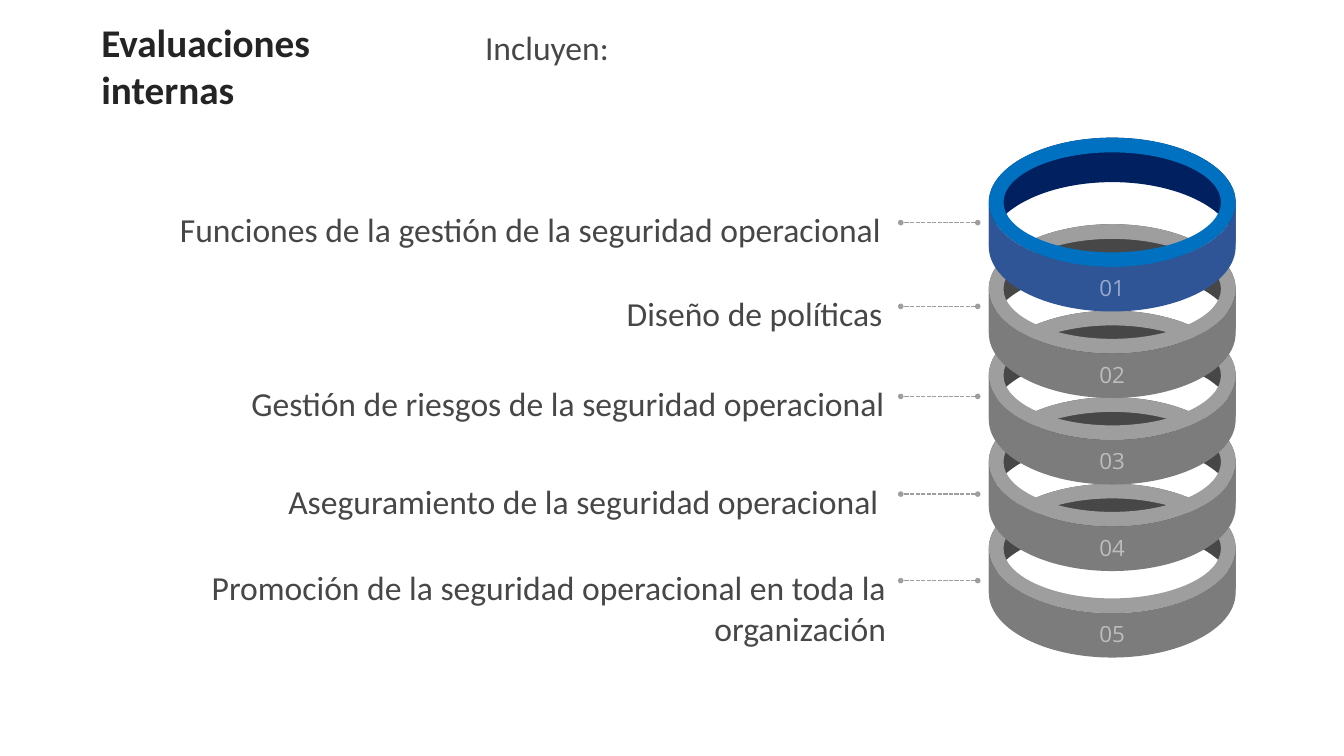
from lxml import etree
from pptx import Presentation
from pptx.dml import color
from pptx.enum import dml, shapes, text
from pptx.oxml import ns
from pptx.util import Cm, Pt

RGBColor = color.RGBColor
INK = RGBColor(0x24, 0x24, 0x24)
GREY = RGBColor(0x47, 0x47, 0x47)
MID = RGBColor(0x7C, 0x7C, 0x7C)
PALE = RGBColor(0x9E, 0x9E, 0x9E)
NAVY = RGBColor(0x00, 0x20, 0x60)
BLUE = RGBColor(0x00, 0x70, 0xC0)
STEEL = RGBColor(0x2F, 0x55, 0x97)
WHITE = RGBColor(0xFF, 0xFF, 0xFF)

# Ring geometry in cm: centre, radii, band, wall depth, distance between rings
MID_X, TOP_Y = 28.03, 5.1
RAD_X, RAD_Y = 3.11, 1.63
BAND, DEPTH, PITCH = 0.37, 1.12, 2.18

# Half a unit circle from right to left as two Bezier curves
BEND = 0.55
HALF = [(1, 0), (1, BEND), (BEND, 1), (0, 1), (-BEND, 1), (-1, BEND), (-1, 0)]

# Label text, top and right edge in cm
ROWS = [
    ("Funciones de la gestión de la seguridad operacional", 5.15, 22.45),
    ("Diseño de políticas", 7.26, 22.49),
    ("Gestión de riesgos de la seguridad operacional", 9.53, 22.54),
    ("Aseguramiento de la seguridad operacional ", 11.99, 22.58),
    ("Promoción de la seguridad operacional en toda la organización", 14.17, 22.58),
]
LEFT = 2.31


def place(shape, x, y, w, h):
    shape.left, shape.top, shape.width, shape.height = Cm(x), Cm(y), Cm(w), Cm(h)


def write(shape, words, size, ink, align, face="Calibri", bold=False):
    frame = shape.text_frame
    frame.word_wrap = True
    frame.auto_size = text.MSO_AUTO_SIZE.NONE
    frame.text = words
    para = frame.paragraphs[0]
    para.alignment = align
    para.space_before = Pt(0)
    font = para.runs[0].font
    font.name, font.size, font.bold = face, Pt(size), bold
    font.color.rgb = ink
    return frame


def arc(y, side, trim=0):
    """Half an ellipse from right to left; side is -1 for up, 1 for down."""
    return [(Cm(MID_X + (RAD_X - trim) * h), Cm(y + side * (RAD_Y - trim) * v))
            for h, v in HALF]


def oval(y, trim=0):
    return arc(y, -1, trim) + arc(y, 1, trim)[-2::-1]


def side_wall(y, side):
    near, far = arc(y, side), arc(y + DEPTH, side)[::-1]
    return near + far[:1] * 3 + far[1:]


def curve(group, loops, fill):
    """Draw closed loops, each a start point and then three points a curve."""
    pen = group.shapes.build_freeform(*loops[0][0])
    for k, loop in enumerate(loops):
        if k:
            pen.move_to(*loop[0])
        pen.add_line_segments(loop[1:], close=True)
    shape = pen.convert_to_shape()
    shape.shadow.inherit = False
    shape.fill.solid()
    shape.fill.fore_color.rgb = fill
    shape.line.fill.background()
    # Join every three straight steps into one Bezier curve
    for track in shape._element.iter(ns.qn("a:path")):
        lines = track.findall(ns.qn("a:lnTo"))
        for k in range(0, len(lines), 3):
            bend = etree.Element(ns.qn("a:cubicBezTo"))
            lines[k].addprevious(bend)
            for line in lines[k:k + 3]:
                bend.append(line[0])
                track.remove(line)
    return shape


def ring(slide, num, back, rim, front):
    y = TOP_Y + (num - 1) * PITCH
    group = slide.shapes.add_group_shape()
    curve(group, [side_wall(y, -1)], back)
    curve(group, [oval(y, BAND), oval(y)], rim)
    face = curve(group, [side_wall(y, 1)], front)
    frame = write(face, f"{num:02}", 16, WHITE, text.PP_ALIGN.CENTER, "Open Sans")
    frame.vertical_anchor = text.MSO_ANCHOR.BOTTOM
    frame.margin_left = frame.margin_right = frame.margin_top = 0
    frame.margin_bottom = Cm(0.26)
    # Half-transparent number
    tint = frame.paragraphs[0].runs[0].font.fill._xPr.find(".//" + ns.qn("a:srgbClr"))
    etree.SubElement(tint, ns.qn("a:alpha"), val="50000")


def label(group, words, top, right):
    box = group.shapes.add_textbox(Cm(LEFT), Cm(top), Cm(right - LEFT), Cm(1.9))
    write(box, words, 24, GREY, text.PP_ALIGN.RIGHT)


def leader(group, y):
    link = group.shapes.add_connector(
        shapes.MSO_CONNECTOR.STRAIGHT, Cm(24.64), Cm(y), Cm(22.7), Cm(y))
    link.line.color.rgb = PALE
    link.line.width = Pt(1)
    link.line.dash_style = dml.MSO_LINE.SQUARE_DOT
    pen = link.line._get_or_add_ln()
    for end in ("a:headEnd", "a:tailEnd"):
        etree.SubElement(pen, ns.qn(end), type="oval", w="sm", len="sm")
    etree.SubElement(link._element.spPr, ns.qn("a:effectLst"))


def main():
    prs = Presentation()
    prs.slide_width, prs.slide_height = Cm(33.87), Cm(19.05)
    slide = prs.slides.add_slide(prs.slide_layouts[0])

    # Heading
    title = slide.shapes.title
    place(title, 2.3, 0.34, 7.24, 2.62)
    frame = write(title, "Evaluaciones internas", 28, INK, text.PP_ALIGN.LEFT, bold=True)
    frame.vertical_anchor = text.MSO_ANCHOR.BOTTOM
    intro = slide.placeholders[1]
    place(intro, 11.97, 0.56, 10.74, 1.27)
    write(intro, "Incluyen:", 24, GREY, text.PP_ALIGN.LEFT)

    # Stack of rings, lowest first
    for num in range(len(ROWS), 1, -1):
        ring(slide, num, GREY, PALE, MID)
    ring(slide, 1, NAVY, BLUE, STEEL)

    # Labels with leader lines
    for words, top, right in ROWS:
        group = slide.shapes.add_group_shape()
        label(group, words, top, right)
        leader(group, top + 0.46)

    prs.save("out.pptx")


if __name__ == "__main__":
    main()
